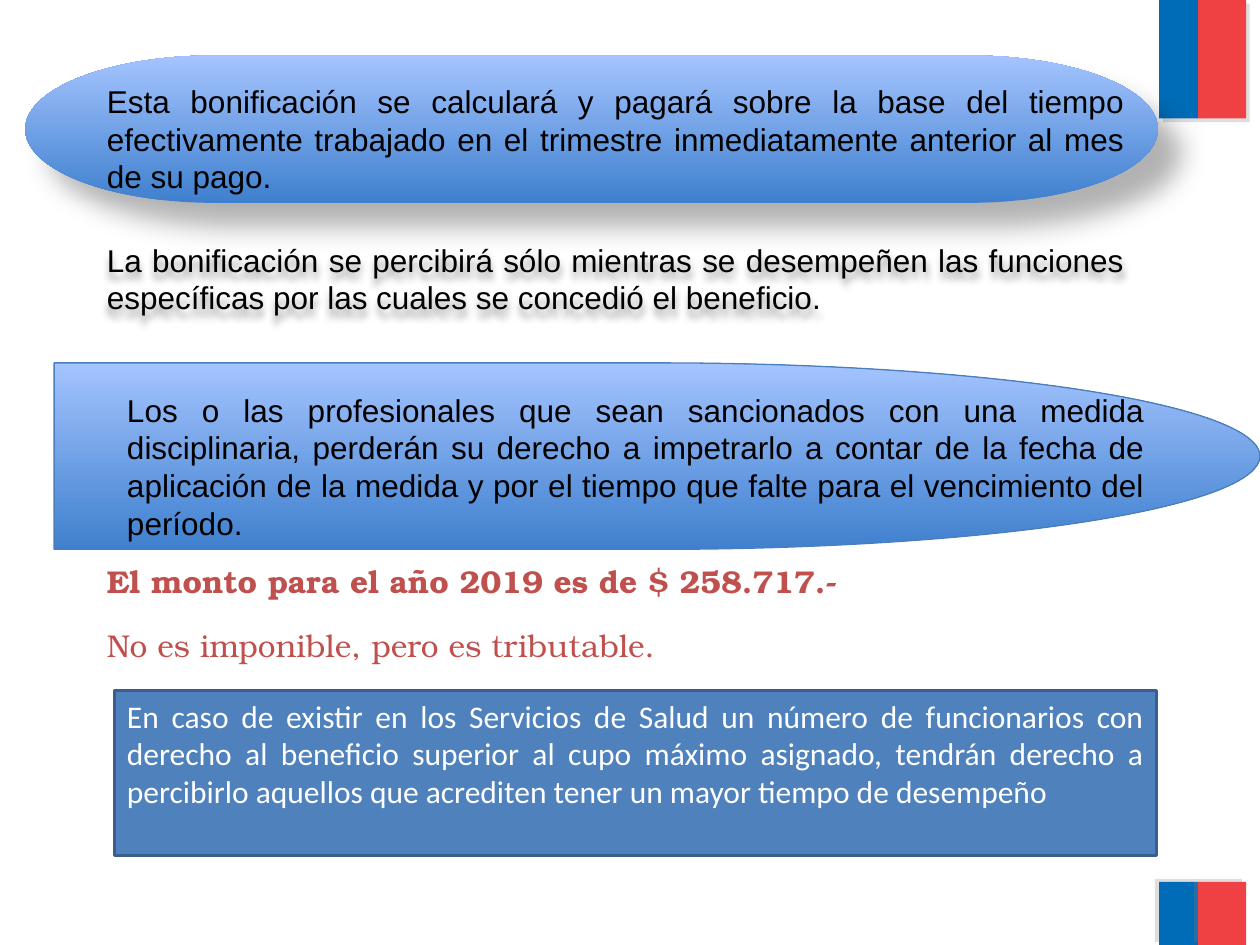
from lxml import etree
from pptx import Presentation
from pptx.dml.color import RGBColor
from pptx.enum.shapes import MSO_SHAPE
from pptx.enum.text import MSO_ANCHOR, PP_ALIGN
from pptx.oxml.ns import qn
from pptx.util import Inches, Pt

RECT = MSO_SHAPE.RECTANGLE
DELAY = MSO_SHAPE.FLOWCHART_DELAY
DRUM = MSO_SHAPE.FLOWCHART_DIRECT_ACCESS_STORAGE
TOP = MSO_ANCHOR.TOP
LEFT = PP_ALIGN.LEFT
JUSTIFY = PP_ALIGN.JUSTIFY

BLACK = RGBColor(0x00, 0x00, 0x00)
WHITE = RGBColor(0xFF, 0xFF, 0xFF)
GREY = RGBColor(0x80, 0x80, 0x80)
NAVY = RGBColor(0x00, 0x6C, 0xB7)
RED = RGBColor(0xEF, 0x41, 0x44)
BRICK = RGBColor(0xC0, 0x50, 0x4D)
DEEP = RGBColor(0x3F, 0x80, 0xCE)
PALE = RGBColor(0xA4, 0xC4, 0xFF)
EDGE = RGBColor(0x4B, 0x7E, 0xBC)
BLUE = RGBColor(0x4F, 0x81, 0xBD)
RIM = RGBColor(0x3A, 0x5F, 0x8C)


def cast(shape, color, alpha, blur, dist, angle):
    shape.shadow.inherit = False
    effects = shape._element.spPr.find(qn("a:effectLst"))
    outer = etree.SubElement(effects, qn("a:outerShdw"), blurRad=str(Pt(blur)),
                             dist=str(Pt(dist)), dir=str(angle * 60000),
                             algn="tl", rotWithShape="0")
    tint = etree.SubElement(outer, qn("a:srgbClr"), val=str(color))
    etree.SubElement(tint, qn("a:alpha"), val=str(alpha * 1000))


def write(shape, text, font, color, bold=False, align=JUSTIFY):
    frame = shape.text_frame
    frame.word_wrap = True
    frame.vertical_anchor = TOP
    frame.text = text
    para = frame.paragraphs[0]
    para.alignment = align
    run = para.runs[0]
    run.font.name = font
    run.font.size = Pt(18)
    run.font.bold = bold
    run.font.color.rgb = color


prs = Presentation()
prs.slide_width = Inches(10)
prs.slide_height = Inches(7.5)
slide = prs.slides.add_slide(prs.slide_layouts[6])
shapes = slide.shapes

for top, height, angle in ((0, 0.94, 45), (7, 0.5, 215)):
    for left, width, color in ((9.2, 0.31, NAVY), (9.51, 0.38, RED)):
        flag = shapes.add_shape(RECT, Inches(left), Inches(top), Inches(width), Inches(height))
        flag.fill.solid()
        flag.fill.fore_color.rgb = color
        flag.line.fill.background()
        cast(flag, GREY, 25, 0, 3, angle)

delay = shapes.add_shape(DELAY, Inches(0.43), Inches(2.88), Inches(9.57), Inches(1.48))
drum = shapes.add_shape(DRUM, Inches(0.2), Inches(0.44), Inches(8.99), Inches(1.17))
for panel in (delay, drum):
    panel.fill.gradient()
    panel.fill.gradient_angle = 90
    for stop, color in zip(panel.fill.gradient_stops, (DEEP, PALE)):
        stop.color.rgb = color
delay.shadow.inherit = False
delay.line.color.rgb = EDGE
delay.line.width = Pt(0.75)
drum.line.fill.background()
cast(drum, BLACK, 30, 15, 18, 45)

notes = (
    (0.75, 4.92, 8.27, 0.4, "TeX Gyre Bonum", BRICK, False, JUSTIFY,
     "No es imponible, pero es tributable."),
    (0.75, 4.41, 7.92, 0.4, "TeX Gyre Bonum", BRICK, True, LEFT,
     "El monto para el año 2019 es de $ 258.717.-"),
    (0.75, 0.6, 8.27, 1.01, "Arial", BLACK, False, JUSTIFY,
     "Esta bonificación se calculará y pagará sobre la base del tiempo "
     "efectivamente trabajado en el trimestre inmediatamente anterior al mes "
     "de su pago."),
    (0.91, 3.05, 8.27, 1.31, "Arial", BLACK, False, JUSTIFY,
     "Los o las profesionales que sean sancionados con una medida "
     "disciplinaria, perderán su derecho a impetrarlo a contar de la fecha de "
     "aplicación de la medida y por el tiempo que falte para el vencimiento "
     "del período."),
)
for left, top, width, height, font, color, bold, align, text in notes:
    box = shapes.add_textbox(Inches(left), Inches(top), Inches(width), Inches(height))
    write(box, text, font, color, bold, align)

term = shapes.add_textbox(Inches(0.75), Inches(1.86), Inches(8.27), Inches(0.71))
write(term, "La bonificación se percibirá sólo mientras se desempeñen las funciones "
      "específicas por las cuales se concedió el beneficio.", "Arial", BLACK)
cast(term, BLACK, 40, 4, 4, 90)

quota = shapes.add_shape(RECT, Inches(0.91), Inches(5.48), Inches(8.27), Inches(1.31))
quota.shadow.inherit = False
quota.fill.solid()
quota.fill.fore_color.rgb = BLUE
quota.line.color.rgb = RIM
quota.line.width = Pt(2)
write(quota, "En caso de existir en los Servicios de Salud un número de funcionarios "
      "con derecho al beneficio superior al cupo máximo asignado, tendrán derecho a "
      "percibirlo aquellos que acrediten tener un mayor tiempo de desempeño",
      "Calibri", WHITE)

prs.save("out.pptx")
